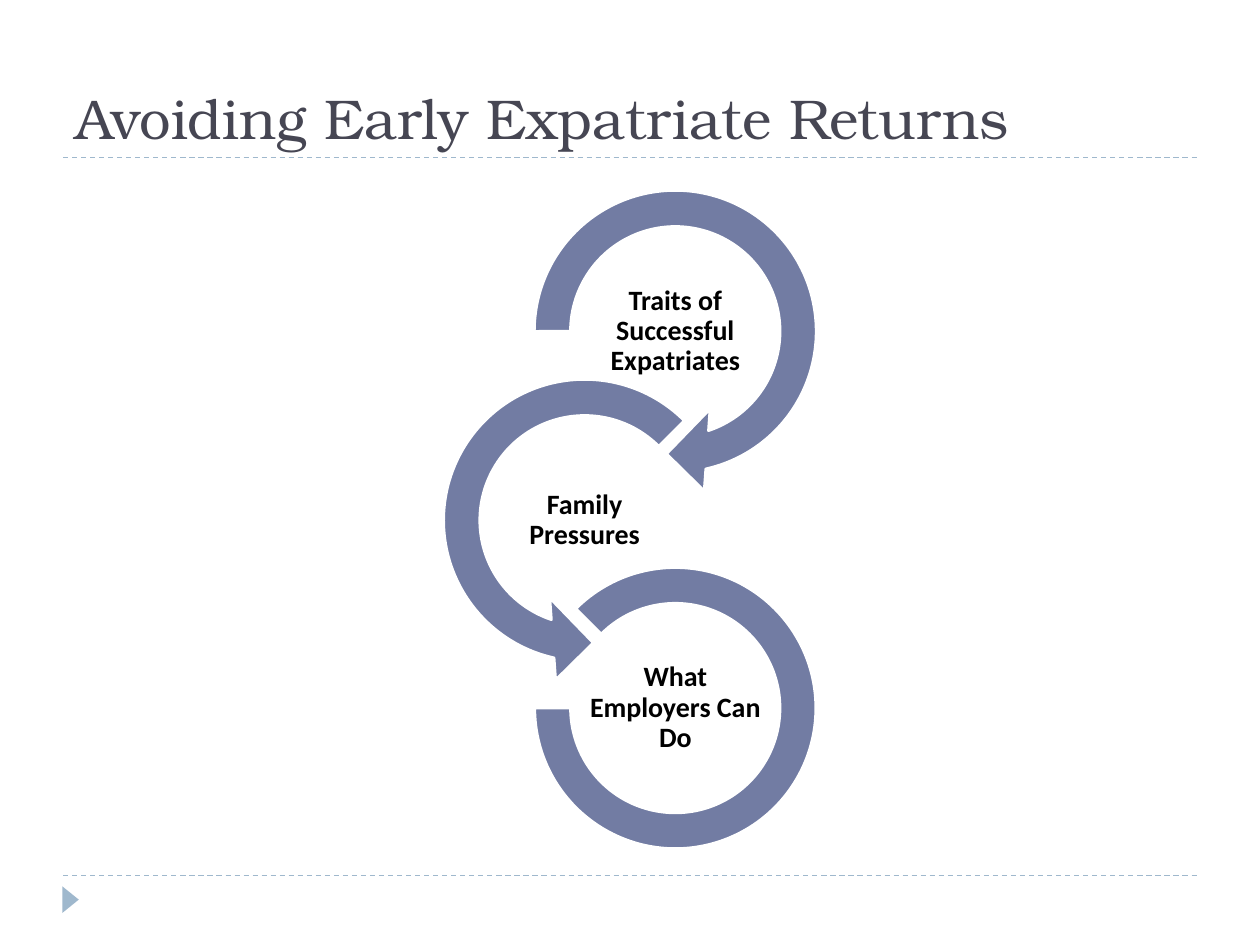
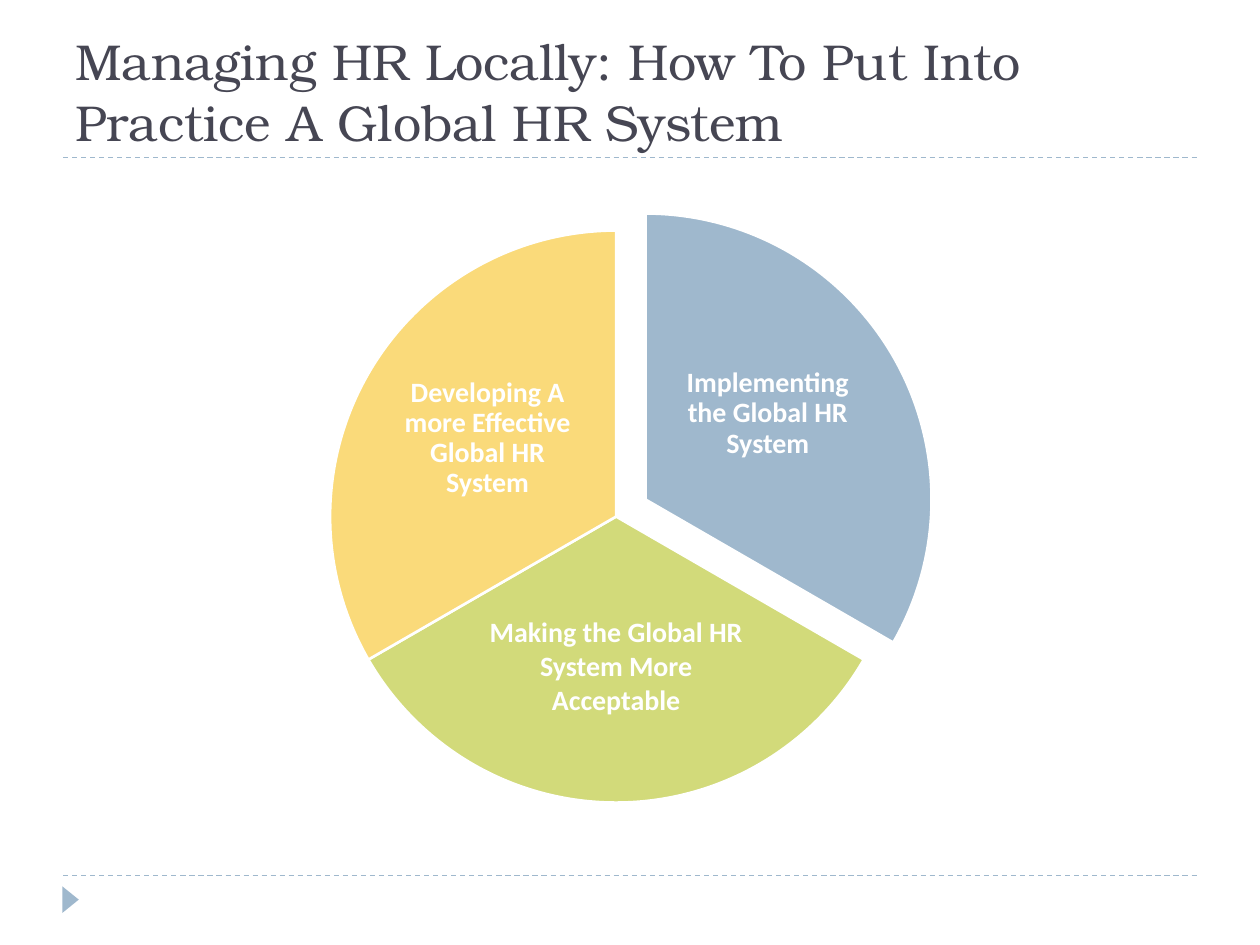
"""Builds two slides on expatriate returns and on managing HR locally."""
from math import cos, radians, sin

from lxml.etree import SubElement
from pptx import Presentation
from pptx.dml.color import RGBColor
from pptx.enum.dml import MSO_LINE
from pptx.enum.shapes import MSO_CONNECTOR, MSO_SHAPE as Preset
from pptx.enum.text import MSO_ANCHOR, MSO_AUTO_SIZE, PP_ALIGN
from pptx.oxml.ns import qn
from pptx.util import Inches, Pt

COLORS = {
    "title": "464653", "ring": "727CA3", "blue": "9FB8CD", "green": "D2DA7A",
    "yellow": "FADA7A", "white": "FFFFFF", "black": "000000",
}
TITLE_FONT, BODY_FONT = "TeX Gyre Bonum", "Calibri"
WIDTH, HEIGHT, MARGIN = 10, 7.5, 0.5
TITLE_TOP, TITLE_HEIGHT = 0.17, 1.08
RULES = (TITLE_TOP + TITLE_HEIGHT, 6.95)
DEGREE = 0.6

RING_TITLE = ("Avoiding Early Expatriate Returns", 32)
RING_OFFSET = 0.36
RING_LABEL = (1.44, 0.72)
RINGS = [
    ("Traits of Successful Expatriates", Preset.CIRCULAR_ARROW, 1, 2.63, 2.6,
     (0.11, 19.04 * DEGREE, 75 * DEGREE, 180 * DEGREE, 0.125)),
    ("Family Pressures", Preset.LEFT_CIRCULAR_ARROW, -1, 4.13, 2.6,
     (0.11, 19.04 * DEGREE, 105 * DEGREE, 315 * DEGREE, 0.125)),
    ("What Employers Can Do", Preset.BLOCK_ARC, 1, 5.62, 2.23,
     (225 * DEGREE, 180 * DEGREE, 0.127)),
]

PIE_TITLE = ("Managing HR Locally: How To Put Into Practice A Global HR System", 28.8)
PIE_CENTER, PIE_SIZE = (4.89, 4.1), 4.54
SLICE_ANGLE = 120
SLICES = [
    {"text": "Implementing the Global HR System", "color": "blue", "pull": 0.27,
     "shift": (0.97, -0.68), "label": (1.54, 1.51), "spacing": 0.9, "bottom": 0.02},
    {"text": "Making the Global HR System More Acceptable", "color": "green", "pull": 0,
     "shift": (0, 1.29), "label": (2.05, 1.4), "spacing": 1, "bottom": 0.24},
    {"text": "Developing A more Effective Global HR System", "color": "yellow", "pull": 0,
     "shift": (-1.02, -0.62), "label": (1.54, 1.51), "spacing": 0.9, "bottom": 0.02},
]


def color(name):
    return RGBColor.from_string(COLORS[name])


def centered(x, y, width, height):
    return [Inches(value) for value in (x - width / 2, y - height / 2, width, height)]


def format_runs(text_frame, font_name, size, color_name, bold=False):
    for paragraph in text_frame.paragraphs:
        for run in paragraph.runs:
            run.font.name = font_name
            run.font.size = Pt(size)
            run.font.bold = bold
            run.font.color.rgb = color(color_name)


def add_preset(slide, preset, box, fill, adjustments=(), outlined=True):
    shape = slide.shapes.add_shape(preset, *box)
    shape.shadow.inherit = False
    shape.fill.solid()
    shape.fill.fore_color.rgb = color(fill)
    if outlined:
        shape.line.color.rgb = color("white")
        shape.line.width = Pt(1.5)
    else:
        shape.line.fill.background()
    for index, value in enumerate(adjustments):
        shape.adjustments[index] = value
    return shape


def add_label(slide, text, box, color_name, inset, bottom, spacing=0.9):
    text_frame = slide.shapes.add_textbox(*box).text_frame
    text_frame.word_wrap = True
    text_frame.vertical_anchor = MSO_ANCHOR.MIDDLE
    text_frame.margin_left = text_frame.margin_right = Inches(inset)
    text_frame.margin_top, text_frame.margin_bottom = Inches(inset), Inches(bottom)
    text_frame.text = text
    text_frame.paragraphs[0].alignment = PP_ALIGN.CENTER
    text_frame.paragraphs[0].line_spacing = spacing
    format_runs(text_frame, BODY_FONT, 16, color_name, bold=True)


def decorate_layout(slide):
    parts = []
    for y in RULES:
        rule = slide.shapes.add_connector(
            MSO_CONNECTOR.STRAIGHT, Inches(MARGIN), Inches(y), Inches(WIDTH - MARGIN), Inches(y))
        rule.line.color.rgb = color("blue")
        rule.line.width = Pt(0.75)
        rule.line.dash_style = MSO_LINE.DASH
        SubElement(rule.element.spPr, qn("a:effectLst"))
        parts.append(rule)
    marker = add_preset(slide, Preset.ISOSCELES_TRIANGLE, centered(0.56, 7.14, 0.21, 0.13),
                        "blue", outlined=False)
    marker.rotation = 90
    for part in parts + [marker]:
        slide.slide_layout.shapes.element.append(part.element)


def add_titled_slide(presentation, text, size):
    slide = presentation.slides.add_slide(presentation.slide_layouts[5])
    title = slide.shapes.title
    title.left, title.top = Inches(MARGIN), Inches(TITLE_TOP)
    title.width, title.height = Inches(WIDTH - 2 * MARGIN), Inches(TITLE_HEIGHT)
    text_frame = title.text_frame
    text_frame.text = text
    text_frame.word_wrap = True
    text_frame.auto_size = MSO_AUTO_SIZE.NONE
    text_frame.vertical_anchor = MSO_ANCHOR.BOTTOM
    text_frame.paragraphs[0].alignment = PP_ALIGN.LEFT
    format_runs(text_frame, TITLE_FONT, size, "title")
    return slide


def draw_rings(slide):
    for text, preset, side, y, size, adjustments in RINGS:
        x = WIDTH / 2 + side * RING_OFFSET
        add_preset(slide, preset, centered(x, y, size, size), "ring", adjustments)
        add_label(slide, text, centered(x, y, *RING_LABEL), "black", 0.01, 0.01)


def draw_pie(slide):
    for index, part in enumerate(SLICES):
        start = (270 + index * SLICE_ANGLE) % 360
        end = (start + SLICE_ANGLE) % 360
        middle = radians(start + SLICE_ANGLE / 2)
        x = PIE_CENTER[0] + part["pull"] * cos(middle)
        y = PIE_CENTER[1] + part["pull"] * sin(middle)
        add_preset(slide, Preset.PIE, centered(x, y, PIE_SIZE, PIE_SIZE), part["color"],
                   (start * DEGREE, end * DEGREE))
        shift_x, shift_y = part["shift"]
        add_label(slide, part["text"], centered(x + shift_x, y + shift_y, *part["label"]),
                  "white", 0.02, part["bottom"], part["spacing"])


def main():
    presentation = Presentation()
    presentation.slide_width, presentation.slide_height = Inches(WIDTH), Inches(HEIGHT)
    ring_slide = add_titled_slide(presentation, *RING_TITLE)
    decorate_layout(ring_slide)
    draw_rings(ring_slide)
    draw_pie(add_titled_slide(presentation, *PIE_TITLE))
    presentation.save("out.pptx")


if __name__ == "__main__":
    main()
